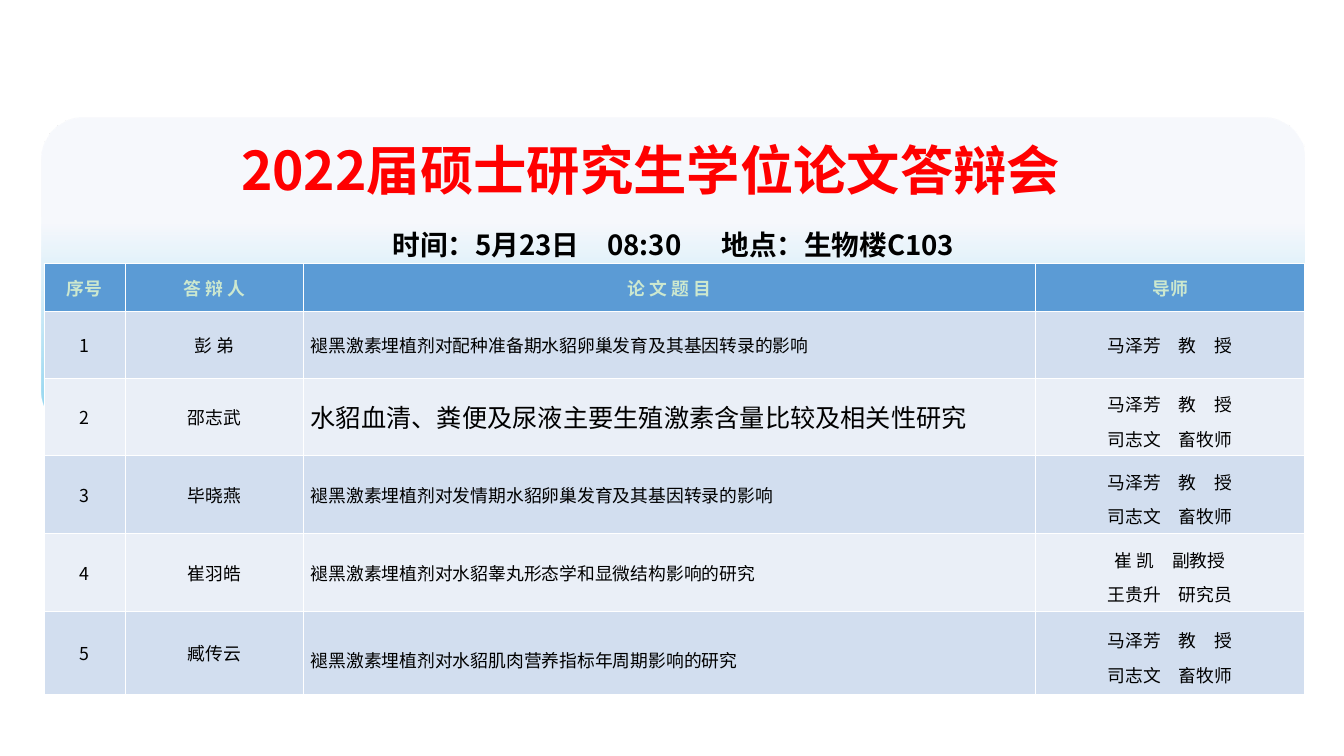
"""Build the timetable slide of a thesis defence."""
from typing import NamedTuple

from lxml.etree import SubElement
from pptx import Presentation
from pptx.dml.color import RGBColor
from pptx.enum.shapes import MSO_SHAPE
from pptx.enum.text import MSO_ANCHOR, MSO_AUTO_SIZE, PP_ALIGN
from pptx.oxml.ns import qn
from pptx.util import Inches, Pt

FACE = "Noto Sans CJK SC"
RED = RGBColor(0xFF, 0x00, 0x00)
BLACK = RGBColor(0x00, 0x00, 0x00)
MINT = RGBColor(0xCC, 0xE8, 0xCF)
PALE = RGBColor(0xF6, 0xF8, 0xFC)
SKY = RGBColor(0x87, 0xD2, 0xEF)
BLUE = RGBColor(0x5B, 0x9B, 0xD5)
BANDS = (RGBColor(0xEA, 0xEF, 0xF7), RGBColor(0xD2, 0xDE, 0xEF))
WIDTHS = (1.14, 2.51, 10.29, 3.79)
HEADS = ("序号", "答 辩 人", "论 文 题 目", "导师")


class Talk(NamedTuple):
    """One thesis with its row height, title size and title spacing."""
    name: str
    topic: str
    guide: str
    height: float
    size: float = 18
    lead: float = 1.0


TALKS = (
    Talk("彭 弟", "褪黑激素埋植剂对配种准备期水貂卵巢发育及其基因转录的影响",
         "马泽芳　教　授", 0.94),
    Talk("邵志武", "水貂血清、粪便及尿液主要生殖激素含量比较及相关性研究",
         "马泽芳　教　授\n司志文　畜牧师", 1.08, size=25.5),
    Talk("毕晓燕", "褪黑激素埋植剂对发情期水貂卵巢发育及其基因转录的影响",
         "马泽芳　教　授\n司志文　畜牧师", 1.1),
    Talk("崔羽皓", "褪黑激素埋植剂对水貂睾丸形态学和显微结构影响的研究",
         "崔 凯　副教授\n王贵升　研究员", 1.1),
    Talk("臧传云", "褪黑激素埋植剂对水貂肌肉营养指标年周期影响的研究",
         "马泽芳　教　授\n司志文　畜牧师", 1.16, lead=1.5),
)


def write(frame, text: str, size: float, color: RGBColor, bold: bool = False,
          align: PP_ALIGN = PP_ALIGN.CENTER, lead=1.0) -> None:
    """Set the text of a frame and format each run."""
    frame.text = text
    for para in frame.paragraphs:
        para.alignment = align
        para.line_spacing = lead
        para.space_before = Pt(0)
        for run in para.runs:
            font = run.font
            font.name, font.size, font.bold = FACE, Pt(size), bold
            font.color.rgb = color
            SubElement(font._element, qn("a:ea"), typeface=FACE)


def fill_cell(cell, color: RGBColor) -> None:
    """Fill a cell and centre its text vertically."""
    cell.fill.solid()
    cell.fill.fore_color.rgb = color
    cell.vertical_anchor = MSO_ANCHOR.MIDDLE


def add_panel(slide) -> None:
    """Draw the rounded gradient panel."""
    panel = slide.shapes.add_shape(MSO_SHAPE.ROUNDED_RECTANGLE, Inches(0.59),
                                   Inches(1.65), Inches(17.76), Inches(4.42))
    panel.adjustments[0] = 0.13
    panel.shadow.inherit = False
    panel.line.fill.background()
    panel.fill.gradient()
    panel.fill.gradient_angle = 270
    for stop, place, color in zip(panel.fill.gradient_stops, (0.33, 1), (PALE, SKY)):
        stop.position = place
        stop.color.rgb = color
    tint = panel._element.spPr.find(".//" + qn("a:srgbClr"))
    SubElement(tint, qn("a:alpha"), val="89000")


def add_heads(slide) -> None:
    """Place the title and the line with time and place."""
    title = slide.shapes.title
    title.left, title.top = Inches(-0.03), Inches(1.74)
    title.width, title.height = Inches(18.36), Inches(1.39)
    frame = title.text_frame
    frame.auto_size = MSO_AUTO_SIZE.NONE
    frame.vertical_anchor = MSO_ANCHOR.MIDDLE
    write(frame, "2022届硕士研究生学位论文答辩会", 54, RED, True, lead=0.9)
    box = slide.shapes.add_textbox(Inches(0.55), Inches(2.92),
                                   Inches(17.84), Inches(0.95))
    box.text_frame.word_wrap = True
    write(box.text_frame, "时间：5月23日　08:30 　 地点：生物楼C103", 28, BLACK,
          True, lead=1.5)


def add_plan(slide) -> None:
    """Draw the table of talks."""
    heights = [0.67] + [talk.height for talk in TALKS]
    table = slide.shapes.add_table(len(heights), len(WIDTHS), Inches(0.62), Inches(3.71),
                                   Inches(sum(WIDTHS)), Inches(sum(heights))).table
    for col, width in zip(table.columns, WIDTHS):
        col.width = Inches(width)
    for row, height in zip(table.rows, heights):
        row.height = Inches(height)
    for col, head in enumerate(HEADS):
        cell = table.cell(0, col)
        fill_cell(cell, BLUE)
        write(cell.text_frame, head, 18, MINT, True)
    for row, talk in enumerate(TALKS, 1):
        cells = [table.cell(row, col) for col in range(len(WIDTHS))]
        for cell in cells:
            fill_cell(cell, BANDS[row % 2])
        num, name, topic, guide = (cell.text_frame for cell in cells)
        write(num, str(row), 18, BLACK)
        write(name, talk.name, 18, BLACK)
        write(topic, talk.topic, talk.size, BLACK, align=PP_ALIGN.LEFT, lead=talk.lead)
        write(guide, talk.guide, 18, BLACK, lead=Pt(35) if "\n" in talk.guide else 1.0)


def main() -> None:
    """Build and save the deck."""
    deck = Presentation()
    deck.slide_width, deck.slide_height = Inches(18.9), Inches(10.63)
    slide = deck.slides.add_slide(deck.slide_layouts[5])
    add_panel(slide)
    add_heads(slide)
    tree = slide.shapes._spTree
    tree.append(slide.shapes.title._element)
    add_plan(slide)
    deck.save("out.pptx")


if __name__ == "__main__":
    main()
